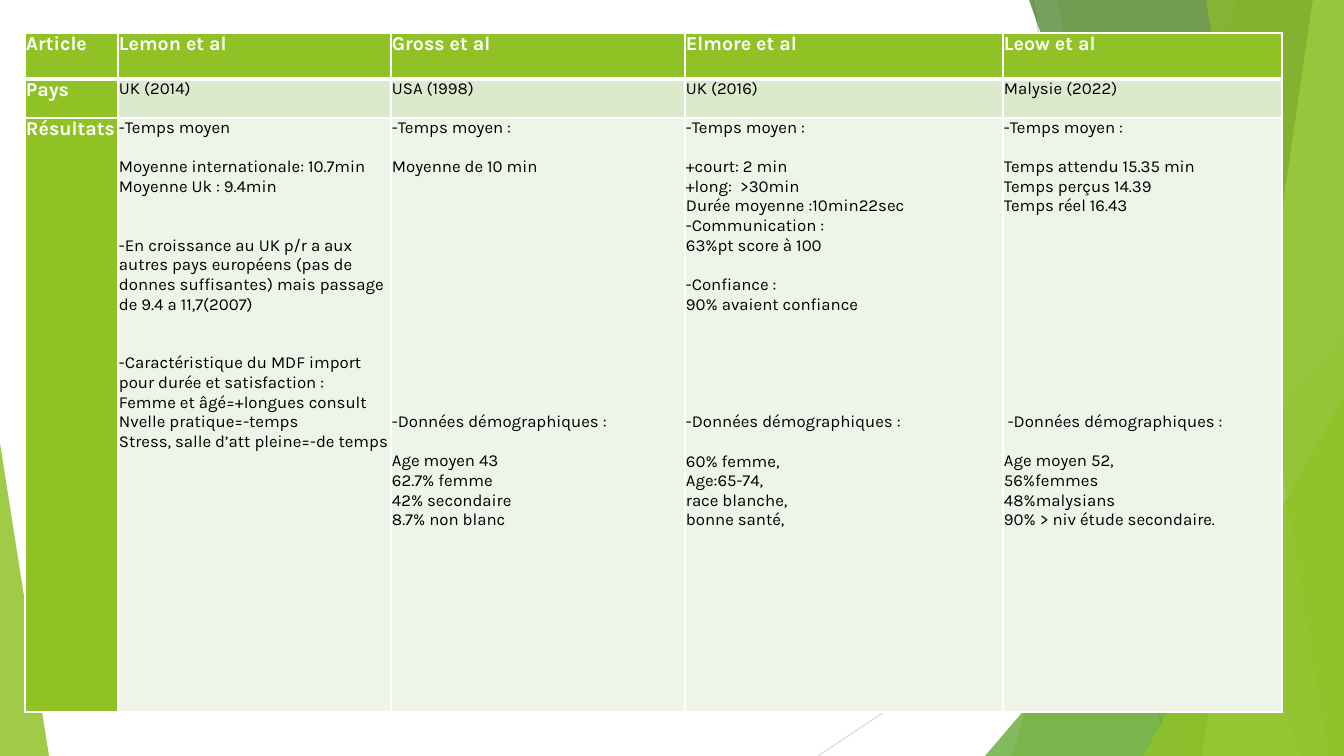
from lxml import etree
from pptx import Presentation
from pptx.dml.color import RGBColor
from pptx.enum.shapes import MSO_CONNECTOR, MSO_SHAPE
from pptx.enum.text import PP_ALIGN
from pptx.oxml.ns import qn
from pptx.util import Pt

PX = 12192000 / 1344
WIDE, HIGH = 1344, 756
STRAIGHT = MSO_CONNECTOR.STRAIGHT
TRIANGLE = MSO_SHAPE.ISOSCELES_TRIANGLE
LEFT = PP_ALIGN.LEFT
FONT = "Karla"
PITCH = 14

COLORS = {
    "green": "90C226", "leaf": "54A021", "dark": "3F7819", "lime": "C0E474",
    "band": "DBE9CD", "pale": "EEF4E8", "white": "FFFFFF", "black": "000000",
    "gray": "BFBFBF", "light": "D9D9D9",
}

LINES = [((1033, 0), (1167, HIGH), "gray"), ((WIDE, 406), (818, HIGH), "light")]
TALL = [
    (1238, 1012, "green", 30),
    (1058, 1192, "green", 20),
    (985, 336, 359, 420, 1, "leaf", 72),
    (1029, 1301, "dark", 70),
    (1313, 1202, "lime", 70),
    (1206, 1329, "green", 65),
    (1143, 396, 201, 360, 1, "green", 80),
    (0, 443, 49, 313, 0, "green", 85),
]

COLS = [93, 273, 294, 318, 279]
ROWS = [46, 39, 594]
HEADS = ["Article", "Lemon et al", "Gross et al", "Elmore et al", "Leow et al"]
LANDS = ["Pays", "UK (2014)", "USA (1998)", "UK (2016)", "Malysie (2022)"]
LEMON = [
    (0, "-Temps moyen"),
    (1, "Moyenne internationale: 10.7min"),
    (0, "Moyenne Uk : 9.4min"),
    (2, "-En croissance au UK p/r a aux autres pays européens (pas de donnes "
        "suffisantes) mais passage de 9.4 a 11,7(2007)"),
    (2, "-Caractéristique du MDF import pour durée et satisfaction :"),
    (0, "Femme et âgé=+longues consult"),
    (0, "Nvelle pratique=-temps"),
    (0, "Stress, salle d’att pleine=-de temps"),
]
GROSS = [
    (0, "-Temps moyen :"),
    (1, "Moyenne de 10 min"),
    (12, "-Données démographiques :"),
    (1, "Age moyen 43"),
    (0, "62.7% femme"),
    (0, "42% secondaire"),
    (0, "8.7% non blanc"),
]
ELMORE = [
    (0, "-Temps moyen :"),
    (1, "+court: 2 min"),
    (0, "+long:  >30min"),
    (0, "Durée moyenne :10min22sec"),
    (0, "-Communication :"),
    (0, "63%pt score à 100"),
    (1, "-Confiance :"),
    (0, "90% avaient confiance"),
    (5, "-Données démographiques :"),
    (1, "60% femme,"),
    (0, "Age:65-74,"),
    (0, "race blanche,"),
    (0, "bonne santé,"),
]
LEOW = [
    (0, "-Temps moyen :"),
    (1, "Temps attendu 15.35 min"),
    (0, "Temps perçus 14.39"),
    (0, "Temps réel 16.43"),
    (10, " -Données démographiques :"),
    (1, "Age moyen 52,"),
    (0, "56%femmes"),
    (0, "48%malysians"),
    (0, "90% > niv étude secondaire."),
]
GRID = [
    [[(0, text)] for text in HEADS],
    [[(0, text)] for text in LANDS],
    [[(0, "Résultats")], LEMON, GROSS, ELMORE, LEOW],
]


def px(size):
    return round(size * PX)


def rgb(name):
    return RGBColor.from_string(COLORS[name])


def paint(shape, color, alpha):
    shape.shadow.inherit = False
    shape.line.fill.background()
    shape.fill.solid()
    shape.fill.fore_color.rgb = rgb(color)
    tint = shape.fill._xPr.find(qn("a:solidFill"))[0]
    etree.SubElement(tint, qn("a:alpha"), val=str(alpha * 1000))


def draw_line(shapes, start, end, color):
    line = shapes.add_connector(STRAIGHT, *map(px, start + end))
    line.line.color.rgb = rgb(color)
    line.line.width = Pt(0.75)
    etree.SubElement(line._element.spPr, qn("a:effectLst"))


def draw_slant(shapes, top, foot, color, alpha):
    pen = shapes.build_freeform(top, 0, scale=PX)
    pen.add_line_segments([(WIDE, 0), (WIDE, HIGH), (foot, HIGH)], close=True)
    paint(pen.convert_to_shape(), color, alpha)


def draw_wedge(shapes, left, top, width, height, tip, color, alpha):
    wedge = shapes.add_shape(TRIANGLE, *map(px, (left, top, width, height)))
    wedge.adjustments[0] = tip
    paint(wedge, color, alpha)


def draw_back(shapes):
    for line in LINES:
        draw_line(shapes, *line)
    for item in TALL:
        draw = draw_slant if len(item) == 4 else draw_wedge
        draw(shapes, *item)


def set_edge(cell, side, width):
    edge = etree.SubElement(cell._tc.get_or_add_tcPr(), qn("a:ln" + side), w=str(Pt(width)))
    fill = etree.SubElement(edge, qn("a:solidFill"))
    etree.SubElement(fill, qn("a:srgbClr"), val=COLORS["white"])


def fill_cell(cell, lines, row, head):
    for side in "LRTB":
        thick = (row, side) in ((0, "B"), (1, "T"))
        set_edge(cell, side, 3 if thick else 1)
    cell.fill.solid()
    cell.fill.fore_color.rgb = rgb("green" if head else ("band", "pale")[row - 1])
    cell.margin_left = cell.margin_right = px(1)
    cell.margin_top = cell.margin_bottom = 0
    frame = cell.text_frame
    for index, (gap, text) in enumerate(lines):
        para = frame.add_paragraph() if index else frame.paragraphs[0]
        para.text = text
        para.alignment = LEFT
        para.space_before = Pt(gap * PITCH)
        para.font.name = FONT
        para.font.size = Pt(14 if head else 12)
        para.font.bold = head
        para.font.color.rgb = rgb("white" if head else "black")


def draw_table(shapes, left, top):
    box = map(px, (left, top, sum(COLS), sum(ROWS)))
    table = shapes.add_table(len(ROWS), len(COLS), *box).table
    for col, width in zip(table.columns, COLS):
        col.width = px(width)
    for row, height in enumerate(ROWS):
        table.rows[row].height = px(height)
        for col, lines in enumerate(GRID[row]):
            fill_cell(table.cell(row, col), lines, row, row == 0 or col == 0)


def main():
    deck = Presentation()
    deck.slide_width, deck.slide_height = px(WIDE), px(HIGH)
    slide = deck.slides.add_slide(deck.slide_layouts[6])
    draw_back(slide.shapes)
    draw_table(slide.shapes, 25, 33)
    deck.save("out.pptx")


if __name__ == "__main__":
    main()
